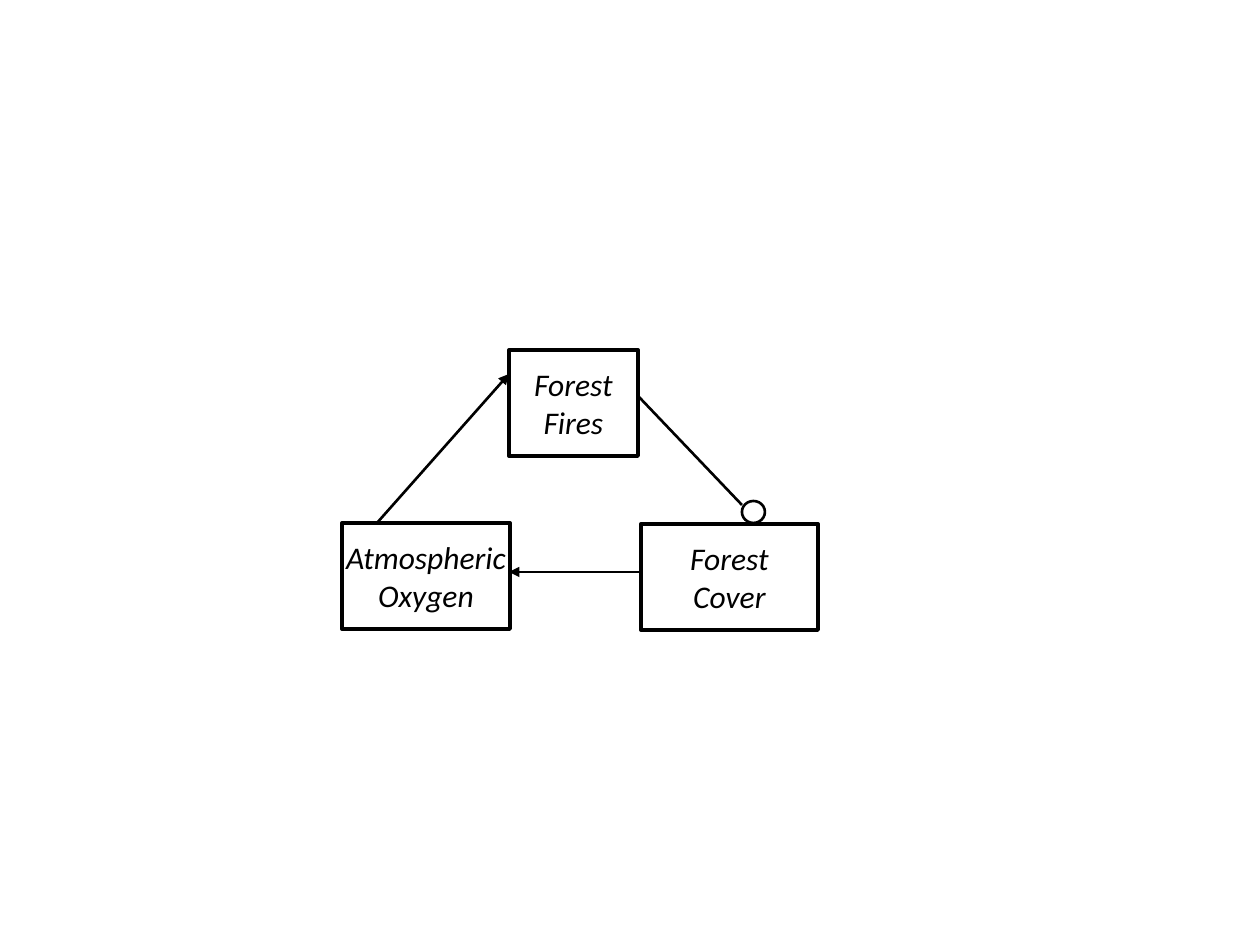
"""Build a slide with the feedback loop between fires, forest cover and oxygen."""
from dataclasses import dataclass

from lxml import etree
from pptx import Presentation
from pptx.dml.color import RGBColor
from pptx.enum.shapes import MSO_CONNECTOR, MSO_SHAPE
from pptx.enum.text import MSO_ANCHOR, PP_ALIGN
from pptx.oxml.ns import qn
from pptx.util import Emu, Pt

RECTANGLE, OVAL = MSO_SHAPE.RECTANGLE, MSO_SHAPE.OVAL
STRAIGHT = MSO_CONNECTOR.STRAIGHT
MIDDLE, CENTER = MSO_ANCHOR.MIDDLE, PP_ALIGN.CENTER
EMU_PER_PX = 914400 // 126


@dataclass(frozen=True)
class Theme:
    ink: RGBColor = RGBColor(0, 0, 0)
    paper: RGBColor = RGBColor(255, 255, 255)
    font: str = "Calibri"
    text_size: Pt = Pt(18)
    box_line: Pt = Pt(2.25)
    link_line: Pt = Pt(1.5)


THEME = Theme()
SLIDE_SIZE = (1260, 945)
BOX_HEIGHT = 106
FACTORS = [
    (("Forest", "Cover"), 641, 524, 177),
    (("Atmospheric", "Oxygen"), 342, 523, 168),
    (("Forest", "Fires"), 509, 350, 129),
]
LINKS = [
    ((377, 523), (509, 374), True),
    ((639, 397), (742, 505), False),
    ((641, 572), (509, 572), True),
]
INHIBITION_MARK = (742, 501, 23, 22)


def px(length):
    return Emu(length * EMU_PER_PX)


def add_outline(slide, preset, frame, line_width):
    outline = slide.shapes.add_shape(preset, *map(px, frame))
    outline.shadow.inherit = False
    outline.line.color.rgb = THEME.ink
    outline.line.width = line_width
    return outline


def add_factor(slide, words, left, top, width):
    box = add_outline(slide, RECTANGLE, (left, top, width, BOX_HEIGHT), THEME.box_line)
    box.fill.solid()
    box.fill.fore_color.rgb = THEME.paper
    label = box.text_frame
    label.word_wrap = False
    label.vertical_anchor = MIDDLE
    label.text = "\n".join(words)
    for paragraph in label.paragraphs:
        paragraph.alignment = CENTER
        paragraph.font.name = THEME.font
        paragraph.font.size = THEME.text_size
        paragraph.font.italic = True
        paragraph.font.color.rgb = THEME.ink


def add_link(slide, start, end, has_arrow):
    link = slide.shapes.add_connector(STRAIGHT, *map(px, start + end))
    link.line.color.rgb = THEME.ink
    link.line.width = THEME.link_line
    properties = link.line._get_or_add_ln()
    if has_arrow:
        etree.SubElement(properties, qn("a:tailEnd"), type="triangle")
    etree.SubElement(properties.getparent(), qn("a:effectLst"))


def main():
    presentation = Presentation()
    presentation.slide_width, presentation.slide_height = map(px, SLIDE_SIZE)
    slide = presentation.slides.add_slide(presentation.slide_layouts[6])
    for factor in FACTORS:
        add_factor(slide, *factor)
    for link in LINKS:
        add_link(slide, *link)
    add_outline(slide, OVAL, INHIBITION_MARK, THEME.link_line).fill.background()
    presentation.save("out.pptx")


if __name__ == "__main__":
    main()
